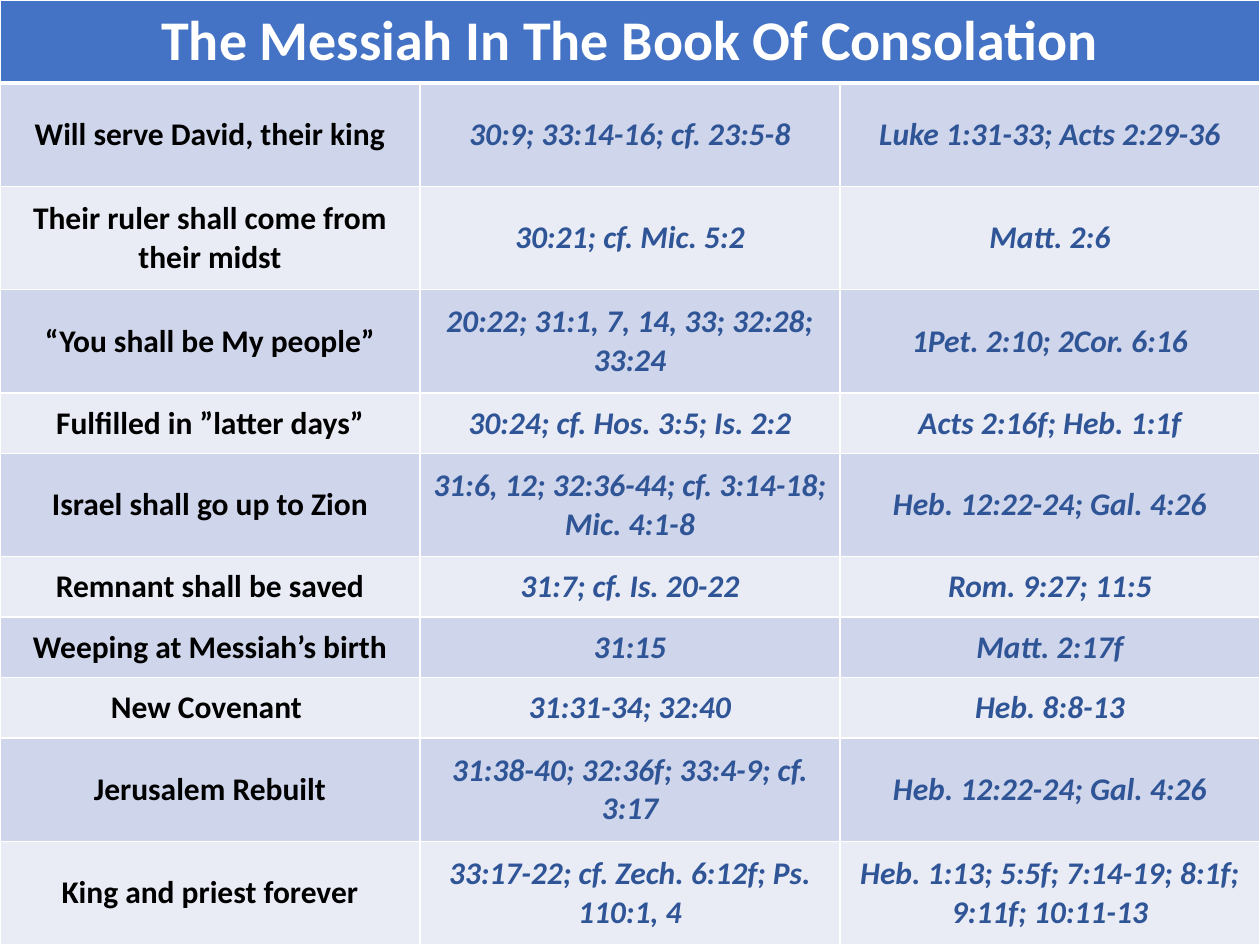
from typing import NamedTuple

from lxml import etree
from pptx import Presentation
from pptx.dml.color import RGBColor
from pptx.enum.text import MSO_ANCHOR, PP_ALIGN
from pptx.oxml.ns import qn
from pptx.util import Pt

EMU_PER_PX = 3048  # 300 px to the inch
EMU_PER_POINT = 12700
SLIDE_WIDTH, SLIDE_HEIGHT = 3000, 2250
HEADER_HEIGHT, TALL, SHORT = 198, 246, 144
COLUMN_COUNT = 3
BLANK_LAYOUT = 6
CENTER = PP_ALIGN.CENTER
MIDDLE = MSO_ANCHOR.MIDDLE

WHITE, BLACK = "FFFFFF", "000000"
HEADER_BLUE, REFERENCE_BLUE = "4472C4", "2F5597"
BAND_FILLS = ("CFD5EA", "E9EBF5")
THIN, THICK = 1, 3

TITLE = "The Messiah In The Book Of Consolation"


class Prophecy(NamedTuple):
    theme: str
    jeremiah: str
    fulfillment: str
    height: int


class TextStyle(NamedTuple):
    size: int
    color: str
    italic: bool = False


PROPHECIES = [
    Prophecy("Will serve David, their king", "30:9; 33:14-16; cf. 23:5-8",
             "Luke 1:31-33; Acts 2:29-36", TALL),
    Prophecy("Their ruler shall come from their midst", "30:21; cf. Mic. 5:2",
             "Matt. 2:6", TALL),
    Prophecy("“You shall be My people”", "20:22; 31:1, 7, 14, 33; 32:28; 33:24",
             "1Pet. 2:10; 2Cor. 6:16", TALL),
    Prophecy("Fulfilled in ”latter days”", "30:24; cf. Hos. 3:5; Is. 2:2",
             "Acts 2:16f; Heb. 1:1f", SHORT),
    Prophecy("Israel shall go up to Zion", "31:6, 12; 32:36-44; cf. 3:14-18; Mic. 4:1-8",
             "Heb. 12:22-24; Gal. 4:26", TALL),
    Prophecy("Remnant shall be saved", "31:7; cf. Is. 20-22", "Rom. 9:27; 11:5", SHORT),
    Prophecy("Weeping at Messiah’s birth", "31:15", "Matt. 2:17f", SHORT),
    Prophecy("New Covenant ", "31:31-34; 32:40", "Heb. 8:8-13", SHORT),
    Prophecy("Jerusalem Rebuilt", "31:38-40; 32:36f; 33:4-9; cf. 3:17",
             "Heb. 12:22-24; Gal. 4:26", TALL),
    Prophecy("King and priest forever", "33:17-22; cf. Zech. 6:12f; Ps. 110:1, 4",
             "Heb. 1:13; 5:5f; 7:14-19; 8:1f; 9:11f; 10:11-13", TALL),
]

TITLE_STYLE = TextStyle(32, WHITE)
THEME_STYLE = TextStyle(18, BLACK)
REFERENCE_STYLE = TextStyle(18, REFERENCE_BLUE, italic=True)
ROW_STYLES = (THEME_STYLE, REFERENCE_STYLE, REFERENCE_STYLE)


def px(length: int) -> int:
    return length * EMU_PER_PX


def rgb(color: str) -> RGBColor:
    return RGBColor.from_string(color)


def format_cell(cell, fill: str, top: int = THIN, bottom: int = THIN) -> None:
    """Set the fill and the white borders; widths are in points."""
    properties = cell._tc.get_or_add_tcPr()
    for side, width in {"L": THIN, "R": THIN, "T": top, "B": bottom}.items():
        line = etree.SubElement(properties, qn(f"a:ln{side}"), w=str(width * EMU_PER_POINT))
        solid = etree.SubElement(line, qn("a:solidFill"))
        etree.SubElement(solid, qn("a:srgbClr"), val=WHITE)
    cell.fill.solid()
    cell.fill.fore_color.rgb = rgb(fill)
    cell.vertical_anchor = MIDDLE


def write_cell(cell, text: str, style: TextStyle) -> None:
    paragraph = cell.text_frame.paragraphs[0]
    paragraph.alignment = CENTER
    run = paragraph.add_run()
    run.text = text
    font_format = {"name": "Calibri", "size": Pt(style.size), "bold": True,
                   "italic": style.italic}
    for attribute, value in font_format.items():
        setattr(run.font, attribute, value)
    run.font.color.rgb = rgb(style.color)


def add_prophecy_table(slide) -> None:
    table = slide.shapes.add_table(len(PROPHECIES) + 1, COLUMN_COUNT, 0, 0,
                                   px(SLIDE_WIDTH), px(SLIDE_HEIGHT)).table
    for column in table.columns:
        column.width = px(SLIDE_WIDTH // COLUMN_COUNT)

    table.rows[0].height = px(HEADER_HEIGHT)
    for cell in table.rows[0].cells:
        format_cell(cell, HEADER_BLUE, bottom=THICK)
    table.cell(0, 0).merge(table.cell(0, COLUMN_COUNT - 1))
    write_cell(table.cell(0, 0), TITLE, TITLE_STYLE)

    for index, prophecy in enumerate(PROPHECIES):
        row = table.rows[index + 1]
        row.height = px(prophecy.height)
        texts = (prophecy.theme, prophecy.jeremiah, prophecy.fulfillment)
        for cell, text, style in zip(row.cells, texts, ROW_STYLES):
            format_cell(cell, BAND_FILLS[index % 2], top=THIN if index else THICK)
            write_cell(cell, text, style)


def main() -> None:
    presentation = Presentation()
    presentation.slide_width = px(SLIDE_WIDTH)
    presentation.slide_height = px(SLIDE_HEIGHT)
    slide = presentation.slides.add_slide(presentation.slide_layouts[BLANK_LAYOUT])
    add_prophecy_table(slide)
    presentation.save("out.pptx")


if __name__ == "__main__":
    main()
